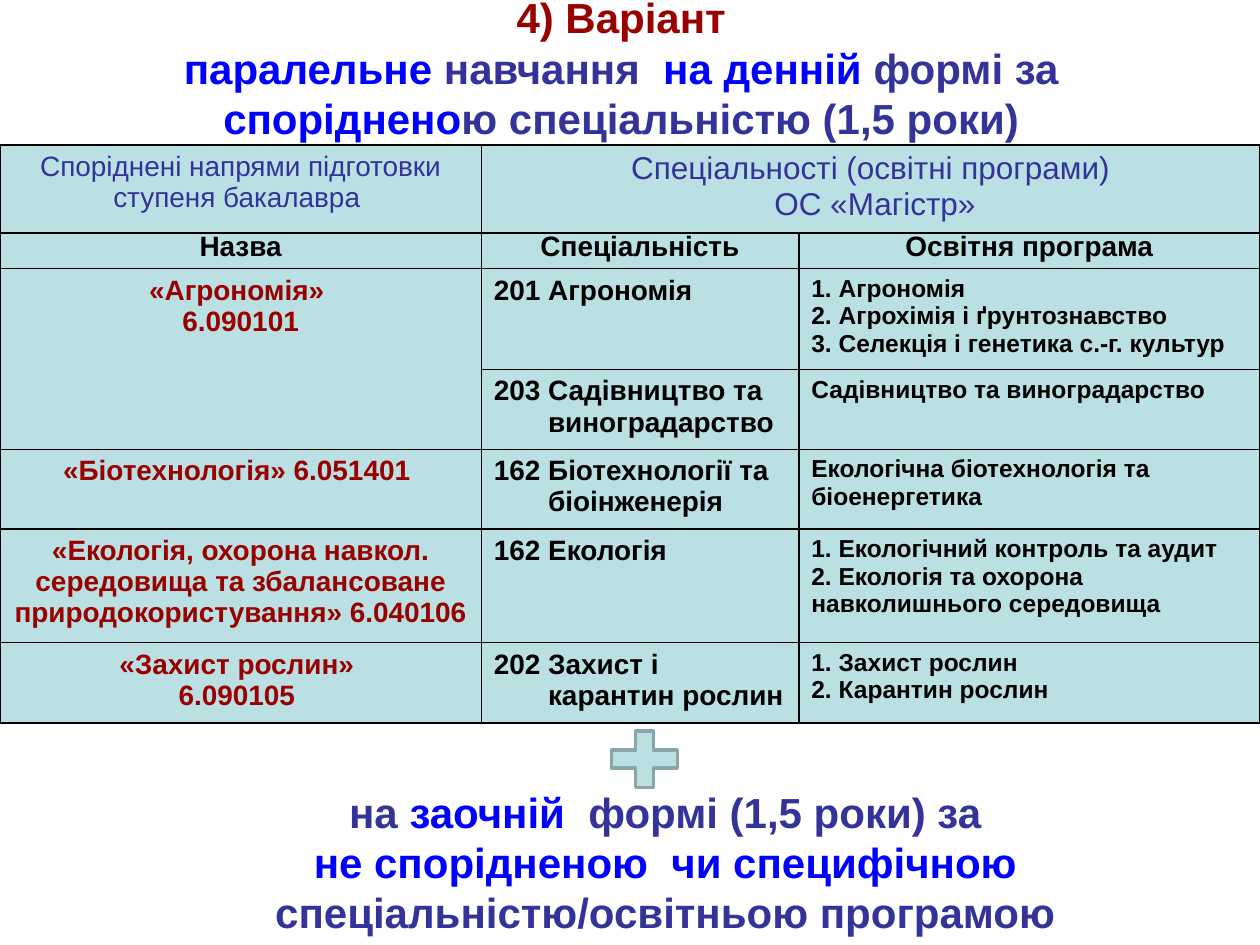
"""Build the slide on parallel study for related bachelor and master specialities."""
from lxml.etree import SubElement
from pptx import Presentation
from pptx.dml.color import RGBColor as Color
from pptx.enum.shapes import MSO_SHAPE as Shape
from pptx.enum.text import MSO_ANCHOR as Anchor, MSO_AUTO_SIZE as AutoSize, PP_ALIGN as Align
from pptx.oxml.ns import qn
from pptx.util import Inches, Pt

THEME = {
    "font": "Arial", "red": "990000", "blue": "0000FF", "navy": "333399", "black": "000000",
    "fill": "BBE0E3", "edge": "8AA6A8",
    "headline": 24, "heading": 18, "text": 16, "detail": 14,
}

deck = Presentation()
deck.slide_width, deck.slide_height = Inches(10), Inches(7.5)
unit = deck.slide_width // 100


def grid(*steps):
    """Turn steps of a 100 by 75 grid into slide lengths."""
    return [round(step * unit) for step in steps]


def write(para, spans, size, bold=True, align=Align.CENTER):
    """Fill a paragraph with (text, colour) spans; a colour of None breaks the line."""
    para.alignment = align
    for text, colour in spans:
        if colour is None:
            para.add_line_break()
            continue
        span = para.add_run()
        span.text = text
        span.font.color.rgb = Color.from_string(THEME[colour])
        for name, value in {"name": THEME["font"], "size": Pt(THEME[size]), "bold": bold}.items():
            setattr(span.font, name, value)


page = deck.slides.add_slide(deck.slide_layouts[5])
title = page.shapes.title
title.left, title.top, title.width, title.height = grid(4.3, 0, 90, 10.7)
title_format = {"auto_size": AutoSize.NONE, "vertical_anchor": Anchor.MIDDLE, "word_wrap": True}
for name, value in title_format.items():
    setattr(title.text_frame, name, value)
write(title.text_frame.paragraphs[0], [
    ("4) Варіант", "red"), ("", None),
    ("паралельне ", "blue"), ("навчання", "navy"), ("  на денній ", "blue"),
    ("формі за ", "navy"), ("споріднено", "blue"), ("ю спеціальністю (1,5 роки)", "navy"),
], "headline")

closing = page.shapes.add_textbox(*grid(14.6, 61.9, 76.4, 13.1)).text_frame
closing.word_wrap = True
write(closing.paragraphs[0], [
    (" на ", "navy"), ("заочній  ", "blue"), ("формі (1,5 роки) за ", "navy"),
], "headline")
write(closing.add_paragraph(), [
    ("не спорідненою  чи специфічною ", "blue"), ("спеціальністю/освітньою програмою", "navy"),
], "headline")

plus = page.shapes.add_shape(Shape.MATH_PLUS, *grid(47.6, 57.2, 7.1, 6.1))
plus.shadow.inherit = False
plus.fill.solid()
plus.fill.fore_color.rgb = Color.from_string(THEME["fill"])
plus.line.color.rgb = Color.from_string(THEME["edge"])
plus.line.width = Pt(2)

rows = [
    [["Споріднені напрями підготовки ступеня бакалавра "],
     ["Спеціальності (освітні програми)", " ОС «Магістр»"], []],
    [["Назва"], [" Спеціальність "], ["Освітня програма"]],
    [["«Агрономія» ", "6.090101"], ["201 Агрономія"],
     ["1. Агрономія", "2. Агрохімія і ґрунтознавство", "3. Селекція і генетика с.-г. культур"]],
    [[], ["203 Садівництво та", "виноградарство"], ["Садівництво та виноградарство"]],
    [["«Біотехнологія» 6.051401 "], ["162 Біотехнології та", "біоінженерія"],
     ["Екологічна біотехнологія та", "біоенергетика"]],
    [["«Екологія, охорона навкол. середовища та збалансоване природокористування» 6.040106"],
     ["162 Екологія"],
     ["1. Екологічний контроль та аудит", "2. Екологія та охорона", "навколишнього середовища"]],
    [["«Захист рослин» ", "6.090105 "], ["202 Захист і", "карантин рослин"],
     ["1. Захист рослин", "2. Карантин рослин"]],
]
widths = grid(38.2, 25.2, 36.6)
heights = grid(7, 2.8, 8, 6.3, 6.3, 9, 6.4)
table = page.shapes.add_table(
    len(rows), len(widths), *grid(0, 11.5), sum(widths), sum(heights)).table
for column, width in zip(table.columns, widths):
    column.width = width
for row, height in zip(table.rows, heights):
    row.height = height
table.cell(0, 1).merge(table.cell(0, 2))
table.cell(2, 0).merge(table.cell(3, 0))

header_formats = [
    {"colour": "navy", "size": "text", "bold": False, "align": Align.CENTER},
    {"colour": "navy", "size": "heading", "bold": False, "align": Align.CENTER},
]
column_formats = [
    {"colour": "red", "size": "text", "align": Align.CENTER},
    {"colour": "black", "size": "text", "align": Align.LEFT},
    {"colour": "black", "size": "detail", "align": Align.LEFT},
]
label_format = {"colour": "black", "size": "text", "align": Align.CENTER}

for row_index, row in enumerate(rows):
    for column_index, lines in enumerate(row):
        cell = table.cell(row_index, column_index)
        properties = cell._tc.get_or_add_tcPr()
        for side in ("lnL", "lnR", "lnT", "lnB"):
            border = SubElement(properties, qn(f"a:{side}"), w=str(Pt(1)))
            paint = SubElement(border, qn("a:solidFill"))
            SubElement(paint, qn("a:srgbClr"), val=THEME["black"])
        cell.fill.solid()
        cell.fill.fore_color.rgb = Color.from_string(THEME["fill"])
        if row_index == 0:
            style = dict(header_formats[min(column_index, 1)])
        else:
            style = dict(label_format if row_index == 1 else column_formats[column_index])
        colour = style.pop("colour")
        for line_index, line in enumerate(lines):
            frame = cell.text_frame
            para = frame.add_paragraph() if line_index else frame.paragraphs[0]
            write(para, [(line, colour)], **style)
            if row_index == 1:
                para.line_spacing = Pt(13)
            elif row_index > 1 and column_index == 1 and line_index:
                para._p.get_or_add_pPr().set("marL", str(Inches(0.43)))
            elif row_index > 1 and column_index == 2:
                hanging = {"marL": Inches(0.5), "indent": -Inches(0.5)}
                for name, value in hanging.items():
                    para._p.get_or_add_pPr().set(name, str(value))

deck.save("out.pptx")
